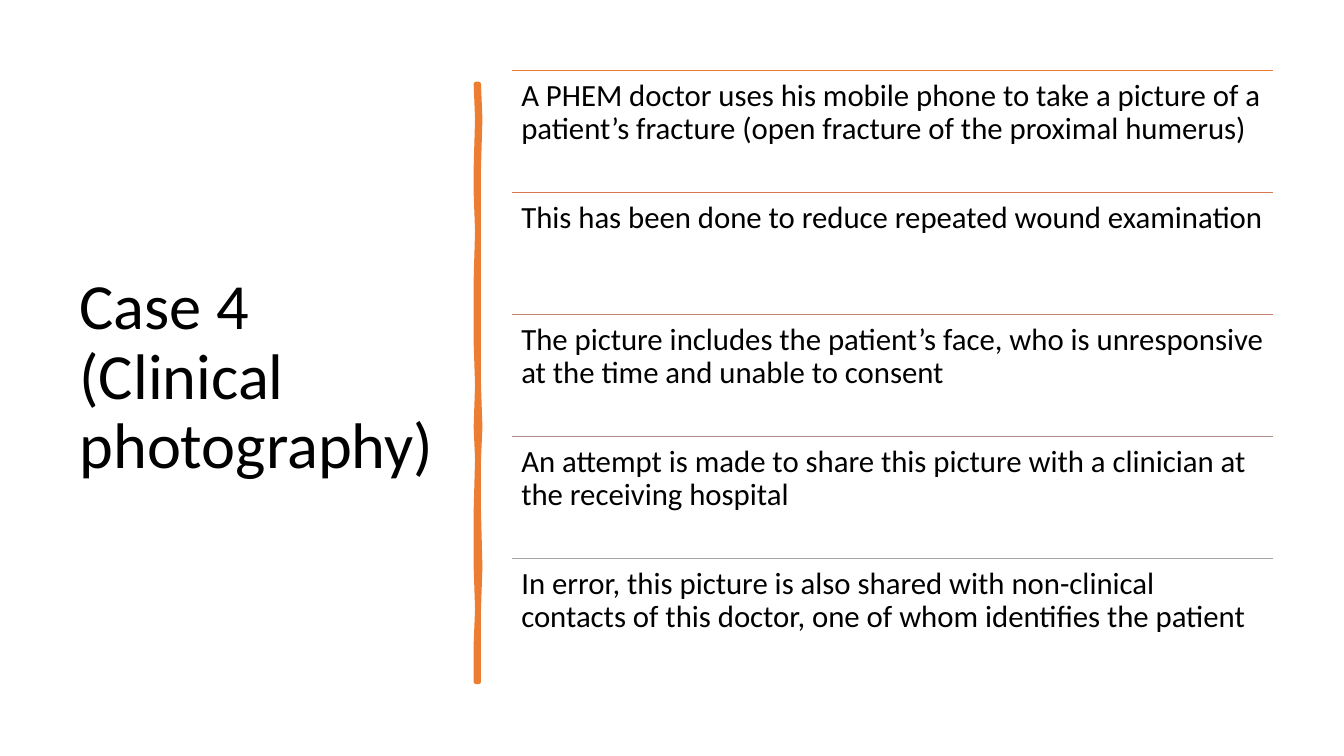
import pptx
import pptx.dml.color
import pptx.enum.shapes
import pptx.enum.text
import pptx.util
from lxml import etree

Pt = pptx.util.Pt
Anchor = pptx.enum.text.MSO_ANCHOR
FONT = "Calibri"
COLORS = {"text": "000000", "brush": "ED7D31"}
LEFT, TOP, WIDTH, STEP = 365.76, 50.4, 543.6, 87.12

POINTS = [
    ("A PHEM doctor uses his mobile phone to take a picture of a patient’s "
     "fracture (open fracture of the proximal humerus)", "ED7D31"),
    ("This has been done to reduce repeated wound examination", "D87A51"),
    ("The picture includes the patient’s face, who is unresponsive at the "
     "time and unable to consent", "C48170"),
    ("An attempt is made to share this picture with a clinician at the "
     "receiving hospital", "B4908B"),
    ("In error, this picture is also shared with non-clinical contacts of "
     "this doctor, one of whom identifies the patient", "A5A5A5"),
]

# Height on the slide, left edge and right edge of the brush stroke
BRUSH = [
    (60.5, 340.4, 341.8), (85, 340.8, 342.6), (120, 339.8, 341.7),
    (138, 340.2, 341.6), (165, 340.9, 342.2), (200, 340.5, 341.9),
    (245, 340.2, 342.4), (275, 340.7, 341.8), (305, 339.9, 343),
    (328, 340.7, 341.6), (365, 340.3, 342.2), (405, 339.9, 343),
    (435, 340.7, 341.9), (460, 340.2, 341.7), (486.7, 340.4, 341.8),
]


def rgb(value):
    return pptx.dml.color.RGBColor.from_string(value)


def add_text(slide, text, box, size, inset, anchor):
    frame = slide.shapes.add_textbox(*map(Pt, box)).text_frame
    frame.word_wrap = True
    frame.vertical_anchor = anchor
    frame.margin_left = frame.margin_right = Pt(inset)
    frame.margin_top = frame.margin_bottom = Pt(inset)
    par = frame.paragraphs[0]
    par.text = text
    par.line_spacing = 0.9
    par.font.name = FONT
    par.font.size = Pt(size)
    par.font.color.rgb = rgb(COLORS["text"])


def add_rule(slide, top, color):
    line = slide.shapes.add_connector(
        pptx.enum.shapes.MSO_CONNECTOR.STRAIGHT,
        Pt(LEFT), Pt(top), Pt(LEFT + WIDTH), Pt(top))
    line.line.color.rgb = rgb(color)
    line.line.width = Pt(1)
    etree.SubElement(line._element.spPr, pptx.oxml.ns.qn("a:effectLst"))


def add_brush(slide):
    """Draw the upright, slightly uneven stroke beside the title."""
    right = [(x, y) for y, _, x in BRUSH]
    left = [(x, y) for y, x, _ in reversed(BRUSH)]
    start, *rest = right + left
    path = slide.shapes.build_freeform(*start, scale=Pt(1))
    path.add_line_segments(rest, close=True)
    shape = path.convert_to_shape()
    shape.shadow.inherit = False
    shape.fill.solid()
    shape.fill.fore_color.rgb = rgb(COLORS["brush"])
    shape.line.color.rgb = rgb(COLORS["brush"])
    shape.line.width = Pt(3.25)


def main():
    deck = pptx.Presentation()
    deck.slide_width, deck.slide_height = Pt(960), Pt(540)
    slide = deck.slides.add_slide(deck.slide_layouts[6])
    add_text(slide, "Case 4 (Clinical photography)",
             (49.68, 50.4, 269.28, 439.92), 46, 7.2, Anchor.MIDDLE)
    add_brush(slide)
    for row, (text, color) in enumerate(POINTS):
        top = TOP + row * STEP
        add_rule(slide, top, color)
        add_text(slide, text, (LEFT, top, WIDTH, STEP), 22, 6.6, Anchor.TOP)
    deck.save("out.pptx")


if __name__ == "__main__":
    main()
